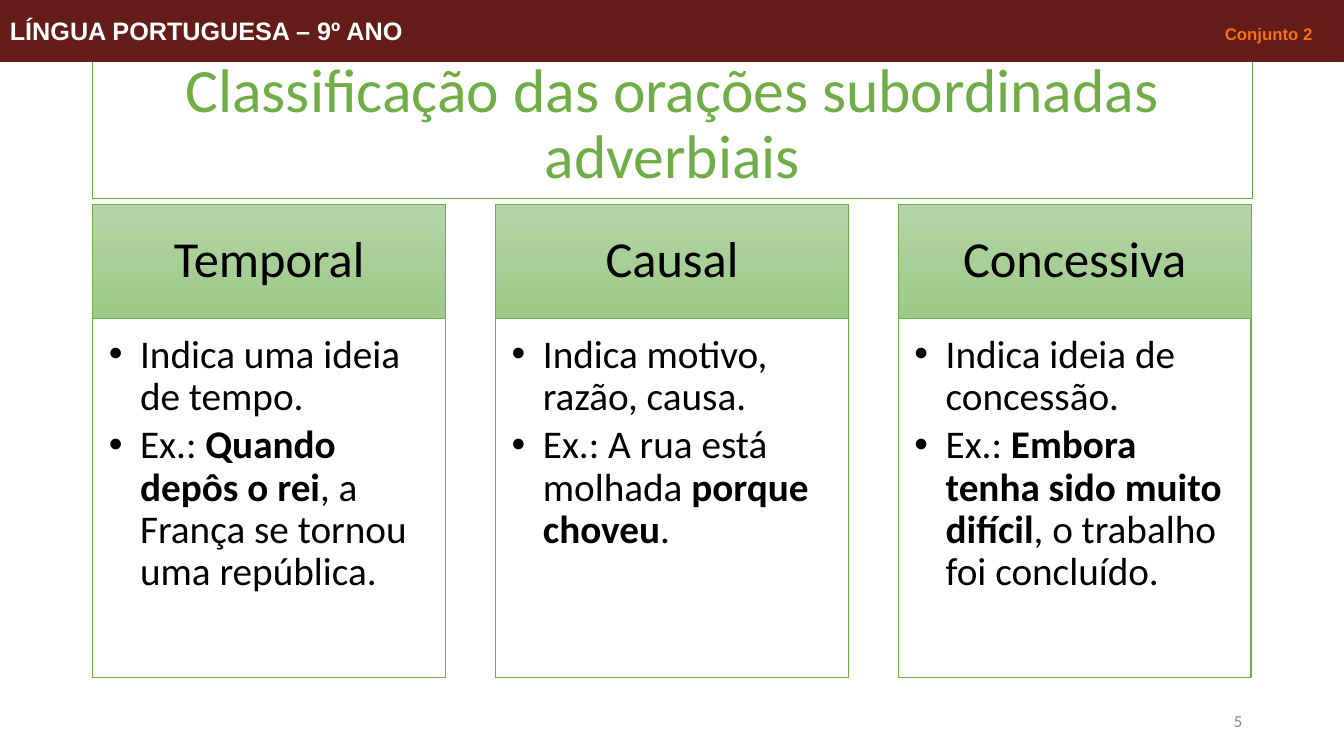
from dataclasses import dataclass

from lxml.etree import SubElement
from pptx import Presentation
from pptx.dml.color import RGBColor
from pptx.enum.shapes import MSO_SHAPE
from pptx.enum.text import MSO_ANCHOR, MSO_AUTO_SIZE, PP_ALIGN
from pptx.oxml.ns import qn
from pptx.util import Inches, Pt

GREEN = "70AD47"
MAROON = "631C18"
BLACK = "000000"
WHITE = "FFFFFF"

LEFT, TOP = 0.92, 2.03
COLUMN_W, PITCH = 3.5, 3.995
HEAD_H, LIST_H = 1.13, 3.56


@dataclass
class Column:
    heading: str
    meaning: str
    example: list[tuple[str, bool]]  # (text, bold)


COLUMNS = [
    Column("Temporal", "Indica uma ideia de tempo.",
           [("Ex.: ", False), ("Quando depôs o rei", True),
            (", a França se tornou uma república.", False)]),
    Column("Causal", "Indica motivo, razão, causa.",
           [("Ex.: A rua está molhada ", False), ("porque choveu", True),
            (".", False)]),
    Column("Concessiva", "Indica ideia de concessão.",
           [("Ex.: ", False), ("Embora tenha sido muito difícil", True),
            (", o trabalho foi concluído.", False)]),
]


def rgb(value: str) -> RGBColor:
    return RGBColor.from_string(value)


def add_text(p, text: str, *, size: float, color: str = BLACK,
             bold: bool = False, font: str = "Calibri") -> None:
    r = p.add_run()
    r.text = text
    r.font.size = Pt(size)
    r.font.name = font
    r.font.bold = bold
    r.font.color.rgb = rgb(color)


def format_paragraph(p, align=PP_ALIGN.LEFT, line: float = 1.0,
                     after: float = 0) -> None:
    p.alignment = align
    p.line_spacing = line
    p.space_before = Pt(0)
    p.space_after = Pt(after)


def format_frame(tf, anchor=MSO_ANCHOR.MIDDLE,
                 insets=(0.1, 0.05, 0.1, 0.05)) -> None:
    """Set wrapping, anchor and insets (left, top, right, bottom)."""
    tf.word_wrap = True
    tf.auto_size = MSO_AUTO_SIZE.NONE
    tf.vertical_anchor = anchor
    (tf.margin_left, tf.margin_top,
     tf.margin_right, tf.margin_bottom) = map(Inches, insets)


def place(sp, left: float, top: float, width: float, height: float) -> None:
    sp.left, sp.top = Inches(left), Inches(top)
    sp.width, sp.height = Inches(width), Inches(height)


def outline(sp, color: str, width: float) -> None:
    sp.line.color.rgb = rgb(color)
    sp.line.width = Pt(width)


def add_rect(slide, left: float, top: float, width: float, height: float):
    sp = slide.shapes.add_shape(MSO_SHAPE.RECTANGLE, Inches(left), Inches(top),
                                Inches(width), Inches(height))
    sp.shadow.inherit = False
    return sp


def add_bullet(p) -> None:
    pPr = p._p.get_or_add_pPr()
    pPr.set("marL", str(Inches(0.31)))
    pPr.set("indent", str(Inches(-0.31)))
    SubElement(pPr, qn("a:buFont"), typeface="Arial")
    SubElement(pPr, qn("a:buChar"), char="•")


def add_tab_stop(p, position: float) -> None:
    tabs = SubElement(p._p.get_or_add_pPr(), qn("a:tabLst"))
    SubElement(tabs, qn("a:tab"), pos=str(Inches(position)), algn="l")


def draw_title(sp) -> None:
    place(sp, LEFT, 0.52, 11.5, 1.45)
    outline(sp, GREEN, 0.75)
    format_frame(sp.text_frame)
    p = sp.text_frame.paragraphs[0]
    format_paragraph(p, PP_ALIGN.CENTER, 0.9)
    add_text(p, "Classificação das orações subordinadas adverbiais",
             size=44, color=GREEN)


def draw_heading(slide, left: float, text: str) -> None:
    sp = add_rect(slide, left, TOP, COLUMN_W, HEAD_H)
    sp.fill.gradient()
    sp.fill.gradient_angle = 270
    for stop, color in zip(sp.fill.gradient_stops, ("B5D5A7", "9CC987")):
        stop.color.rgb = rgb(color)
    outline(sp, GREEN, 0.5)
    format_frame(sp.text_frame, insets=(0.28, 0.16, 0.28, 0.16))
    p = sp.text_frame.paragraphs[0]
    format_paragraph(p, PP_ALIGN.CENTER, 0.9)
    add_text(p, text, size=36)


def draw_list(sp, left: float, column: Column) -> None:
    place(sp, left, TOP + HEAD_H, COLUMN_W, LIST_H)
    sp.fill.solid()
    sp.fill.fore_color.rgb = rgb(WHITE)
    outline(sp, GREEN, 1)
    tf = sp.text_frame
    format_frame(tf, MSO_ANCHOR.TOP, (0.16, 0.16, 0.22, 0.24))
    items = [[(column.meaning, False)], column.example]
    for p, runs in zip((tf.paragraphs[0], tf.add_paragraph()), items):
        format_paragraph(p, line=0.9, after=4)
        add_bullet(p)
        for text, bold in runs:
            add_text(p, text, size=28, bold=bold)


def draw_page_number(slide) -> None:
    sp = slide.shapes.add_textbox(Inches(9.42), Inches(6.95),
                                  Inches(3), Inches(0.4))
    format_frame(sp.text_frame)
    p = sp.text_frame.paragraphs[0]
    format_paragraph(p, PP_ALIGN.RIGHT)
    add_text(p, "5", size=12, color="8C8C8C")


def draw_banner(slide) -> None:
    sp = add_rect(slide, 0, 0, 13.33, 0.61)
    sp.fill.solid()
    sp.fill.fore_color.rgb = rgb(MAROON)
    outline(sp, MAROON, 0.75)
    format_frame(sp.text_frame)
    p = sp.text_frame.paragraphs[0]
    format_paragraph(p)
    add_tab_stop(p, 12.05)
    add_text(p, "LÍNGUA PORTUGUESA – 9º ANO\t", size=18, color=WHITE,
             bold=True, font="Arial")
    add_text(p, "Conjunto 2", size=12, color="F47116", bold=True, font="Arial")


def main() -> None:
    prs = Presentation()
    prs.slide_width, prs.slide_height = Inches(13.33), Inches(7.5)
    slide = prs.slides.add_slide(prs.slide_layouts.get_by_name("Comparison"))

    draw_title(slide.shapes.title)
    bodies = [sp for sp in slide.placeholders if sp.placeholder_format.idx > 0]
    for i, (column, body) in enumerate(zip(COLUMNS, bodies)):
        left = LEFT + i * PITCH
        draw_heading(slide, left, column.heading)
        draw_list(body, left, column)
    for spare in bodies[len(COLUMNS):]:
        spare.element.getparent().remove(spare.element)
    draw_page_number(slide)
    draw_banner(slide)
    prs.save("out.pptx")


if __name__ == "__main__":
    main()
